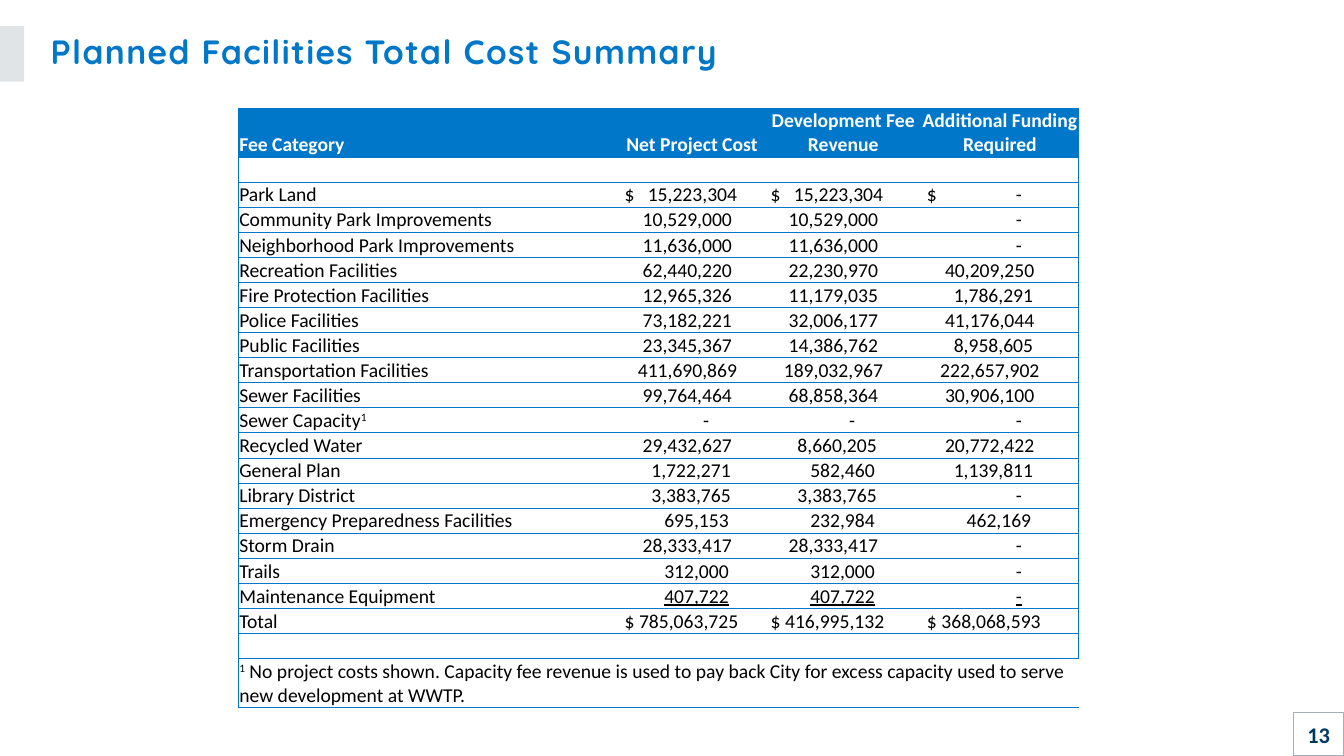
from dataclasses import dataclass
from lxml.etree import SubElement
from pptx import Presentation
from pptx.dml.color import RGBColor
from pptx.enum.shapes import MSO_SHAPE
from pptx.enum.text import MSO_ANCHOR, MSO_AUTO_SIZE, PP_ALIGN
from pptx.oxml.ns import qn
from pptx.util import Cm, Pt


@dataclass(frozen=True)
class Theme:
    """Colours, fonts and type sizes of the slide."""
    blue: str = "0077C8"
    navy: str = "003865"
    grey: str = "E1E4E7"
    edge: str = "A5ADB7"
    white: str = "FFFFFF"
    black: str = "000000"
    head: str = "Quicksand"
    body: str = "Calibri"
    title: int = 24
    cell: int = 14
    page: int = 16
    rule: float = 0.5


THEME = Theme()
PLAIN = "{2D5ABB26-0587-4C30-8999-92F81FD0307C}"
WIDTHS = (9.6, 3.68, 3.94, 3.96)
HEADS = ("Fee Category", "Net Project Cost", "Development Fee Revenue",
         "Additional Funding Required")
TABS = {11: 2.95, 10: 2.82, 9: 2.79, 7: 2.74}
COSTS = (
    ("Park Land", "$15,223,304", "$15,223,304", "$-"),
    ("Community Park Improvements", "10,529,000", "10,529,000", "-"),
    ("Neighborhood Park Improvements", "11,636,000", "11,636,000", "-"),
    ("Recreation Facilities", "62,440,220", "22,230,970", "40,209,250"),
    ("Fire Protection Facilities", "12,965,326", "11,179,035", "1,786,291"),
    ("Police Facilities", "73,182,221", "32,006,177", "41,176,044"),
    ("Public Facilities", "23,345,367", "14,386,762", "8,958,605"),
    ("Transportation Facilities", "411,690,869", "189,032,967", "222,657,902"),
    ("Sewer Facilities", "99,764,464", "68,858,364", "30,906,100"),
    ("Sewer Capacity^1", "-", "-", "-"),
    ("Recycled Water", "29,432,627", "8,660,205", "20,772,422"),
    ("General Plan", "1,722,271", "582,460", "1,139,811"),
    ("Library District", "3,383,765", "3,383,765", "-"),
    ("Emergency Preparedness Facilities", "695,153", "232,984", "462,169"),
    ("Storm Drain", "28,333,417", "28,333,417", "-"),
    ("Trails", "312,000", "312,000", "-"),
    ("Maintenance Equipment", "407,722", "407,722", "-"),
    ("Total", "$785,063,725", "$416,995,132", "$368,068,593"),
)
NOTE = (" No project costs shown. Capacity fee revenue is used to pay back City "
        "for excess capacity used to serve new development at WWTP.")


def add_run(para, text, size, color, font=THEME.body, bold=False, raised=False):
    """Add one formatted run to a paragraph and return it."""
    run = para.add_run()
    run.text = text
    run.font.size, run.font.name, run.font.bold = Pt(size), font, bold
    run.font.color.rgb = RGBColor.from_string(color)
    if raised:
        run._r.get_or_add_rPr().set("baseline", "30000")
    return run


def add_box(slide, box, fill=None, line=None):
    """Add a flat rectangle with an optional fill and outline."""
    shape = slide.shapes.add_shape(MSO_SHAPE.RECTANGLE, *map(Cm, box))
    shape.shadow.inherit = False
    if fill:
        shape.fill.solid()
        shape.fill.fore_color.rgb = RGBColor.from_string(fill)
    else:
        shape.fill.background()
    if line:
        shape.line.color.rgb = RGBColor.from_string(line)
        shape.line.width = Pt(0.75)
    else:
        shape.line.fill.background()
    return shape


def add_title(slide, box, text):
    """Place the heading with the grey tab at the slide edge."""
    left, top, width, height = box
    add_box(slide, (0, top, 0.61, height), fill=THEME.grey)
    title = slide.shapes.title
    title.left, title.top, title.width, title.height = map(Cm, box)
    frame = title.text_frame
    frame.auto_size = MSO_AUTO_SIZE.NONE
    frame.word_wrap = True
    frame.vertical_anchor = MSO_ANCHOR.MIDDLE
    para = frame.paragraphs[0]
    para.alignment, para.line_spacing = PP_ALIGN.LEFT, 0.9
    run = add_run(para, text, THEME.title, THEME.blue, THEME.head, True)
    run._r.get_or_add_rPr().set("spc", "100")


def add_page(slide, box, text):
    """Place the page number in its outlined corner box."""
    frame = add_box(slide, box, line=THEME.edge).text_frame
    frame.vertical_anchor = MSO_ANCHOR.MIDDLE
    frame.margin_left = frame.margin_right = 0
    para = frame.paragraphs[0]
    para.alignment = PP_ALIGN.CENTER
    add_run(para, text, THEME.page, THEME.navy, bold=True)


def style_cell(cell, sides, fill=None):
    """Set insets, anchor, ruled sides and fill of a cell."""
    cell.margin_left = cell.margin_right = cell.margin_top = Cm(0.03)
    cell.margin_bottom = 0
    cell.vertical_anchor = MSO_ANCHOR.BOTTOM
    props = cell._tc.get_or_add_tcPr()
    for side in "LRTB":
        line = SubElement(props, qn(f"a:ln{side}"), w=str(Pt(THEME.rule)))
        if side in sides:
            solid = SubElement(line, qn("a:solidFill"))
            SubElement(solid, qn("a:srgbClr"), val=THEME.blue)
        else:
            SubElement(line, qn("a:noFill"))
    if fill:
        cell.fill.solid()
        cell.fill.fore_color.rgb = RGBColor.from_string(fill)
    else:
        cell.fill.background()


def fill_name(cell, text):
    """Write a fee category, raising any mark after a caret."""
    para = cell.text_frame.paragraphs[0]
    name, _, mark = text.partition("^")
    add_run(para, name, THEME.cell, THEME.black)
    if mark:
        add_run(para, mark, THEME.cell, THEME.black, raised=True)


def fill_sum(cell, text, dash, under, total):
    """Write an amount against a right tab, or a total after its sign."""
    para = cell.text_frame.paragraphs[0]
    num = text.lstrip("$")
    sign = " $" if text != num else ""
    gap = " " if total else "\t"
    if not total:
        stop = TABS.get(len(num), dash)
        stop = TABS[11] if sign and num != "-" else stop
        tabs = SubElement(para._p.get_or_add_pPr(), qn("a:tabLst"))
        SubElement(tabs, qn("a:tab"), pos=str(Cm(stop)), algn="r")
    run = add_run(para, sign + gap + num, THEME.cell, THEME.black)
    if under:
        run.font.underline = True


def add_costs(slide, box):
    """Build the cost table with heading, spacer rows and footnote."""
    rows = len(COSTS) + 4
    frame = slide.shapes.add_table(rows, len(WIDTHS), *map(Cm, box))
    table = frame.table
    table.horz_banding = False
    table._tbl.tblPr.find(qn("a:tableStyleId")).text = PLAIN
    for col, width in zip(table.columns, WIDTHS):
        col.width = Cm(width)
    last = len(WIDTHS) - 1
    for r, row in enumerate(table.rows):
        row.height = Cm({0: 1.2, rows - 1: 1.24}.get(r, 0.63))
        for c, cell in enumerate(row.cells):
            sides = "TB" + "L" * (c == 0) + "R" * (c == last)
            style_cell(cell, sides, None if r else THEME.blue)
            end = SubElement(cell.text_frame.paragraphs[0]._p, qn("a:endParaRPr"))
            end.set("sz", str(THEME.cell * 100))
    for c, head in enumerate(HEADS):
        para = table.cell(0, c).text_frame.paragraphs[0]
        para.alignment = PP_ALIGN.CENTER if c else PP_ALIGN.LEFT
        add_run(para, head, THEME.cell, THEME.white, bold=True)
    for r, (name, *sums) in enumerate(COSTS, 2):
        fill_name(table.cell(r, 0), name)
        for c, text in enumerate(sums, 1):
            fill_sum(table.cell(r, c), text, 2.5 if c == last else 2.24,
                     name == "Maintenance Equipment", name == "Total")
    foot = table.cell(rows - 1, 0)
    foot.merge(table.cell(rows - 1, last))
    para = foot.text_frame.paragraphs[0]
    add_run(para, "1", THEME.cell, THEME.black, raised=True)
    add_run(para, NOTE, THEME.cell, THEME.black)


def main():
    """Build the slide and save it."""
    deck = Presentation()
    deck.slide_width, deck.slide_height = Cm(33.87), Cm(19.05)
    slide = deck.slides.add_slide(deck.slide_layouts[5])
    add_title(slide, (1.02, 0.66, 31.12, 1.4), "Planned Facilities Total Cost Summary")
    add_costs(slide, (6, 2.72, sum(WIDTHS), 15.04))
    add_page(slide, (32.59, 17.96, 1.28, 1.09), "13")
    deck.save("out.pptx")


if __name__ == "__main__":
    main()
